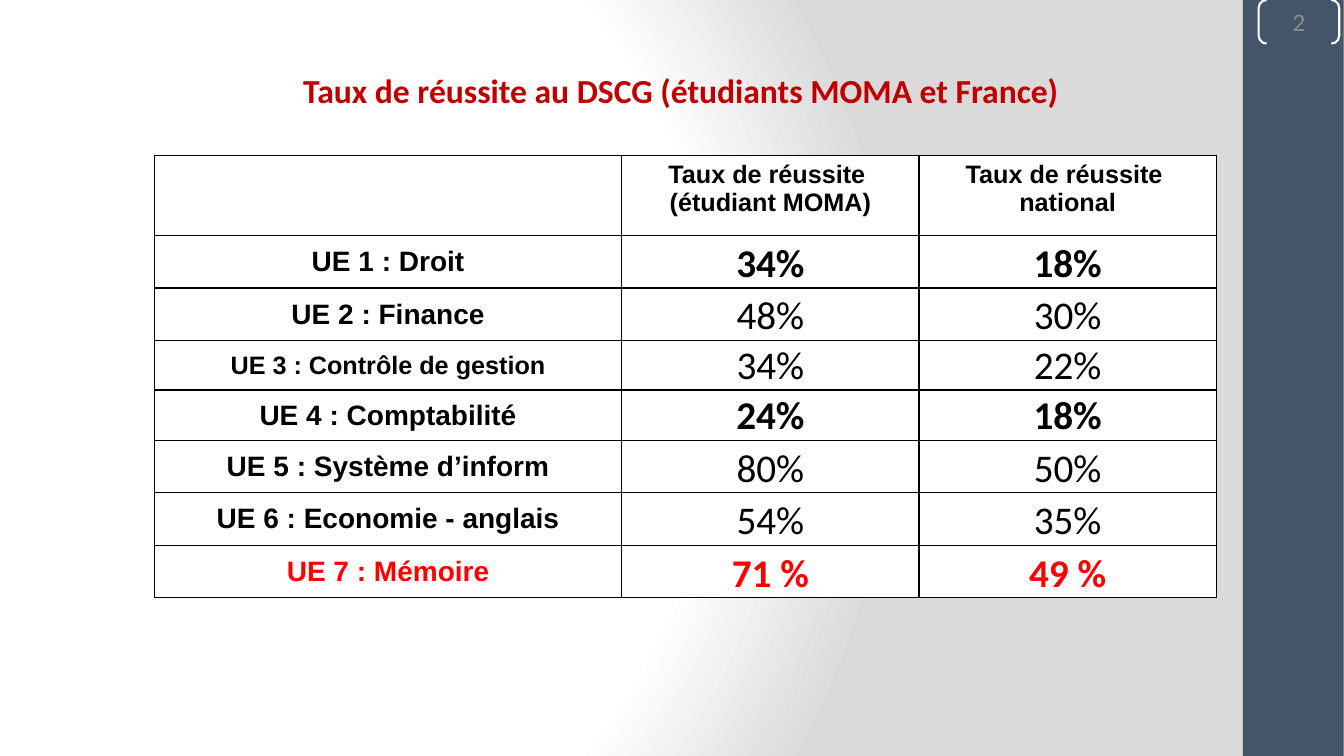
from dataclasses import dataclass

from lxml import etree
from pptx import Presentation, util as u
from pptx.dml.color import RGBColor
from pptx.enum import shapes, text
from pptx.oxml import parse_xml
from pptx.oxml.ns import nsdecls, qn

WHITE, BLACK, RED = "FFFFFF", "000000", "FF0000"
MID, TOP, LOW = (text.MSO_ANCHOR.MIDDLE, text.MSO_ANCHOR.TOP,
                 text.MSO_ANCHOR.BOTTOM)
PAD = (0.25, 0.13, 0.25, 0.13)
TIGHT = (0.03, 0.03, 0.03, 0)


@dataclass
class Unit:
    name: str
    moma: str
    nation: str
    high: float = 1.32
    size: int = 20
    bold: bool = False
    color: str = BLACK


HEADS = ("", "Taux de réussite \n(étudiant MOMA)", "Taux de réussite \nnational")
UNITS = (
    Unit("UE 1 : Droit", "34%", "18%", bold=True),
    Unit("UE 2 : Finance", "48%", "30%"),
    Unit("UE 3 : Contrôle de gestion", "34%", "22%", high=1.25, size=18),
    Unit("UE 4 : Comptabilité", "24%", "18%", high=1.27, bold=True),
    Unit("UE 5 : Système d’inform", "80%", "50%"),
    Unit("UE 6 : Economie - anglais", "54%", "35%"),
    Unit("UE 7 : Mémoire", "71 %", "49 %", bold=True, color=RED),
)


def paint(target, color: str) -> None:
    target.solid()
    target.fore_color.rgb = RGBColor.from_string(color)


def write(frame, words: str, size: float = 18, font: str = "Calibri",
          color: str = BLACK, bold: bool = False) -> None:
    for i, line in enumerate(words.split("\n")):
        para = frame.paragraphs[0] if i == 0 else frame.add_paragraph()
        para.alignment = text.PP_ALIGN.CENTER
        run = para.add_run()
        run.text = line
        run.font.size = u.Pt(size)
        run.font.name = font
        run.font.bold = bold
        paint(run.font.fill, color)


def rule(cell) -> None:
    props = cell._tc.get_or_add_tcPr()
    for i, side in enumerate(("lnL", "lnR", "lnT", "lnB")):
        line = etree.Element(qn(f"a:{side}"), w=str(u.Pt(1)))
        fill = etree.SubElement(line, qn("a:solidFill"))
        etree.SubElement(fill, qn("a:srgbClr"), val=BLACK)
        props.insert(i, line)


def fill_cell(cell, words: str, pad: tuple, anchor, **style) -> None:
    paint(cell.fill, WHITE)
    rule(cell)
    (cell.margin_left, cell.margin_top,
     cell.margin_right, cell.margin_bottom) = map(u.Cm, pad)
    cell.vertical_anchor = anchor
    if words:
        write(cell.text_frame, words, **style)


def add_back(slide) -> None:
    stops = "".join(f'<a:gs pos="{pos}000"><a:srgbClr val="{color}"/></a:gs>'
                    for pos, color in ((0, WHITE), (75, WHITE), (100, "DADADA")))
    slide.background.fill.solid()
    props = slide._element.find(".//" + qn("p:bgPr"))
    grad = parse_xml(
        f'<a:gradFill {nsdecls("a")} rotWithShape="1"><a:gsLst>{stops}</a:gsLst>'
        '<a:path path="circle"><a:fillToRect l="20000" t="50000" r="100000"'
        ' b="50000"/></a:path></a:gradFill>')
    props.replace(props[0], grad)


def add_side(slide) -> None:
    band = slide.shapes.add_shape(shapes.MSO_SHAPE.RECTANGLE, u.Cm(31.32), 0,
                                  u.Cm(2.54), u.Cm(19.05))
    band.shadow.inherit = False
    paint(band.fill, "44546A")
    band.line.fill.background()
    page = slide.shapes.add_shape(shapes.MSO_SHAPE.DOUBLE_BRACKET, u.Cm(31.72), 0,
                                  u.Cm(2.03), u.Cm(1.1))
    page.adjustments[0] = 0.18
    page.shadow.inherit = False
    page.fill.background()
    paint(page.line.fill, WHITE)
    page.line.width = u.Pt(1.5)
    frame = page.text_frame
    frame.margin_left = frame.margin_right = 0
    frame.margin_top = frame.margin_bottom = 0
    frame.vertical_anchor = MID
    write(frame, "2", color="8C8C8C")


def add_title(slide) -> None:
    title = slide.shapes.title
    title.left, title.top = u.Cm(3.89), u.Cm(1.63)
    title.width, title.height = u.Cm(26.54), u.Cm(1.27)
    title.text_frame.vertical_anchor = TOP
    title.text_frame.auto_size = text.MSO_AUTO_SIZE.SHAPE_TO_FIT_TEXT
    write(title.text_frame, "Taux de réussite au DSCG (étudiants MOMA et France)",
          size=24, color="C00000", bold=True)


def add_rates(slide) -> None:
    table = slide.shapes.add_table(len(UNITS) + 1, len(HEADS), u.Cm(3.89),
                                   u.Cm(3.91), u.Cm(26.76), u.Cm(11.1)).table
    for col, wide in zip(table.columns, (11.78, 7.49, 7.49)):
        col.width = u.Cm(wide)
    table.rows[0].height = u.Cm(2.03)
    for i, head in enumerate(HEADS):
        fill_cell(table.cell(0, i), head, PAD, TOP, font="Arial", bold=True)
    for r, unit in enumerate(UNITS, 1):
        table.rows[r].height = u.Cm(unit.high)
        fill_cell(table.cell(r, 0), unit.name, PAD, MID, size=unit.size,
                  font="Arial", color=unit.color, bold=True)
        for c, rate in enumerate((unit.moma, unit.nation), 1):
            fill_cell(table.cell(r, c), rate, TIGHT, LOW, size=28,
                      color=unit.color, bold=unit.bold)


def main() -> None:
    deck = Presentation()
    deck.slide_width, deck.slide_height = u.Cm(33.87), u.Cm(19.05)
    slide = deck.slides.add_slide(deck.slide_layouts[5])
    add_back(slide)
    add_side(slide)
    add_rates(slide)
    add_title(slide)
    deck.save("out.pptx")


if __name__ == "__main__":
    main()
